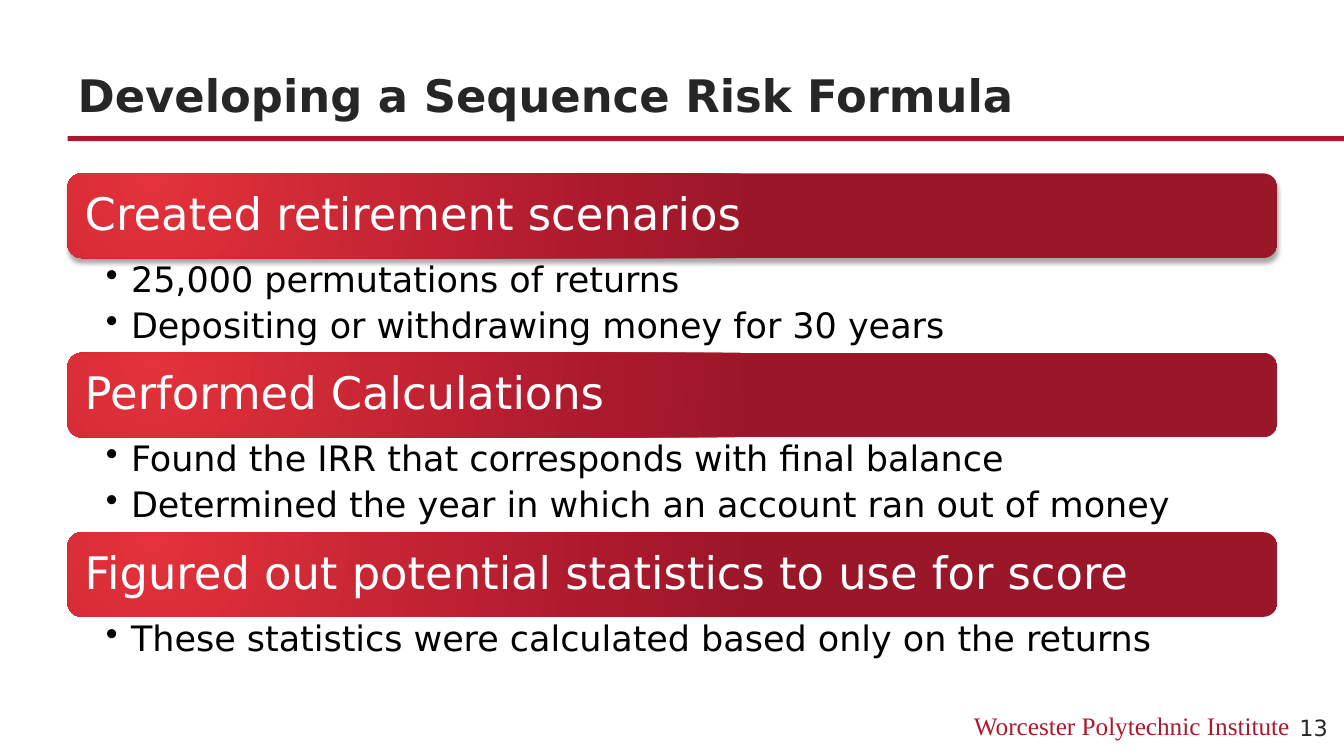
from lxml import etree
from pptx import Presentation
from pptx.dml.color import RGBColor
from pptx.enum.shapes import MSO_SHAPE
from pptx.enum.text import MSO_ANCHOR, MSO_AUTO_SIZE, PP_ALIGN
from pptx.oxml import parse_xml
from pptx.oxml.ns import nsdecls, qn
from pptx.util import Emu, Pt

RECTANGLE, ROUNDED = MSO_SHAPE.RECTANGLE, MSO_SHAPE.ROUNDED_RECTANGLE
TOP, MIDDLE, BOTTOM = MSO_ANCHOR.TOP, MSO_ANCHOR.MIDDLE, MSO_ANCHOR.BOTTOM
LEFT, RIGHT = PP_ALIGN.LEFT, PP_ALIGN.RIGHT
NO_AUTOFIT = MSO_AUTO_SIZE.NONE
TITLE_ONLY = 5

SECTIONS = [
    ("Created retirement scenarios", 94,
     ["25,000 permutations of returns",
      "Depositing or withdrawing money for 30 years"]),
    ("Performed Calculations", 94,
     ["Found the IRR that corresponds with final balance",
      "Determined the year in which an account ran out of money"]),
    ("Figured out potential statistics to use for score", 58,
     ["These statistics were calculated based only on the returns"]),
]


def px(length):
    """100 px make one inch."""
    return Emu(length * 9144)


def color(value):
    return RGBColor.from_string(value)


def add_bullet(paragraph, indent):
    properties = paragraph._p.get_or_add_pPr()
    properties.set("marL", str(px(indent)))
    properties.set("indent", str(-px(indent)))
    etree.SubElement(properties, qn("a:buChar")).set("char", "•")


def write_text(frame, lines, size=32, fill="000000", font="DejaVu Sans", bold=False,
               align=LEFT, anchor=TOP, insets=(10, 5, 10, 5), line_spacing=1.0,
               space_after=0, bullets=False):
    frame.word_wrap = True
    frame.auto_size = NO_AUTOFIT
    frame.vertical_anchor = anchor
    (frame.margin_left, frame.margin_top,
     frame.margin_right, frame.margin_bottom) = map(px, insets)
    for index, line in enumerate(lines):
        paragraph = frame.add_paragraph() if index else frame.paragraphs[0]
        if bullets:
            paragraph.level = 1
            add_bullet(paragraph, 25)
        paragraph.alignment = align
        paragraph.line_spacing = line_spacing
        paragraph.space_before = Pt(0)
        paragraph.space_after = Pt(space_after)
        run = paragraph.add_run()
        run.text = line
        run.font.size = Pt(size)
        run.font.name = font
        run.font.bold = bold
        run.font.color.rgb = color(fill)


class SlideBuilder:
    accent = "AB192D"
    ink = "262626"
    gradient = [(0, "E3323B"), (76, "AB192D"), (100, "9A1729")]

    def __init__(self, slide):
        self.slide = slide

    def title(self, box, text):
        shape = self.slide.shapes.title
        shape.left, shape.top, shape.width, shape.height = map(px, box)
        write_text(shape.text_frame, [text], fill=self.ink, bold=True, anchor=BOTTOM)

    def text(self, box, lines, **text_format):
        shape = self.slide.shapes.add_textbox(*map(px, box))
        write_text(shape.text_frame, lines, **text_format)

    def block(self, kind, box):
        shape = self.slide.shapes.add_shape(kind, *map(px, box))
        shape.shadow.inherit = False
        shape.fill.solid()
        shape.fill.fore_color.rgb = color(self.accent)
        shape.line.fill.background()
        return shape

    def heading_bar(self, box, text):
        shape = self.block(ROUNDED, box)
        properties = shape._element.spPr
        # Radial gradient
        stops = "".join(f'<a:gs pos="{position * 1000}"><a:srgbClr val="{value}"/></a:gs>'
                        for position, value in self.gradient)
        properties.replace(properties.find(qn("a:solidFill")), parse_xml(
            f'<a:gradFill {nsdecls("a")} rotWithShape="1"><a:gsLst>{stops}</a:gsLst>'
            '<a:path path="circle">'
            '<a:fillToRect l="15000" t="15000" r="100000" b="100000"/>'
            '</a:path></a:gradFill>'))
        # Soft shadow below the bar
        properties.find(qn("a:effectLst")).append(parse_xml(
            f'<a:outerShdw {nsdecls("a")} blurRad="{Pt(3)}" dist="{Pt(3)}" dir="5400000" '
            'rotWithShape="0"><a:srgbClr val="000000"><a:alpha val="35000"/></a:srgbClr>'
            '</a:outerShdw>'))
        write_text(shape.text_frame, [text], fill="FFFFFF", anchor=MIDDLE,
                   insets=(13, 13, 13, 13), line_spacing=0.9)

    def bullet_list(self, box, lines):
        self.text(box, lines, size=25, insets=(38, 4, 25, 4), line_spacing=0.9,
                  space_after=6, bullets=True)


def main():
    presentation = Presentation()
    presentation.slide_width, presentation.slide_height = px(1333), px(750)
    layout = presentation.slide_layouts[TITLE_ONLY]
    builder = SlideBuilder(presentation.slides.add_slide(layout))

    # Title and rule
    builder.title((67, 38, 1200, 88), "Developing a Sequence Risk Formula")
    builder.block(RECTANGLE, (67, 135, 1266, 5))

    # Heading bars, each followed by its list
    top, bar_height = 172, 84
    for heading, list_height, lines in SECTIONS:
        builder.heading_bar((67, top, 1200, bar_height), heading)
        top += bar_height
        builder.bullet_list((67, top, 1200, list_height), lines)
        top += list_height

    # Footer
    builder.text((800, 700, 489, 40), ["Worcester Polytechnic Institute"], size=18,
                 font="Times New Roman", fill=builder.accent, align=RIGHT)
    builder.text((1279, 700, 54, 43), ["13"], size=16, fill=builder.ink, anchor=MIDDLE)

    presentation.save("out.pptx")


if __name__ == "__main__":
    main()
